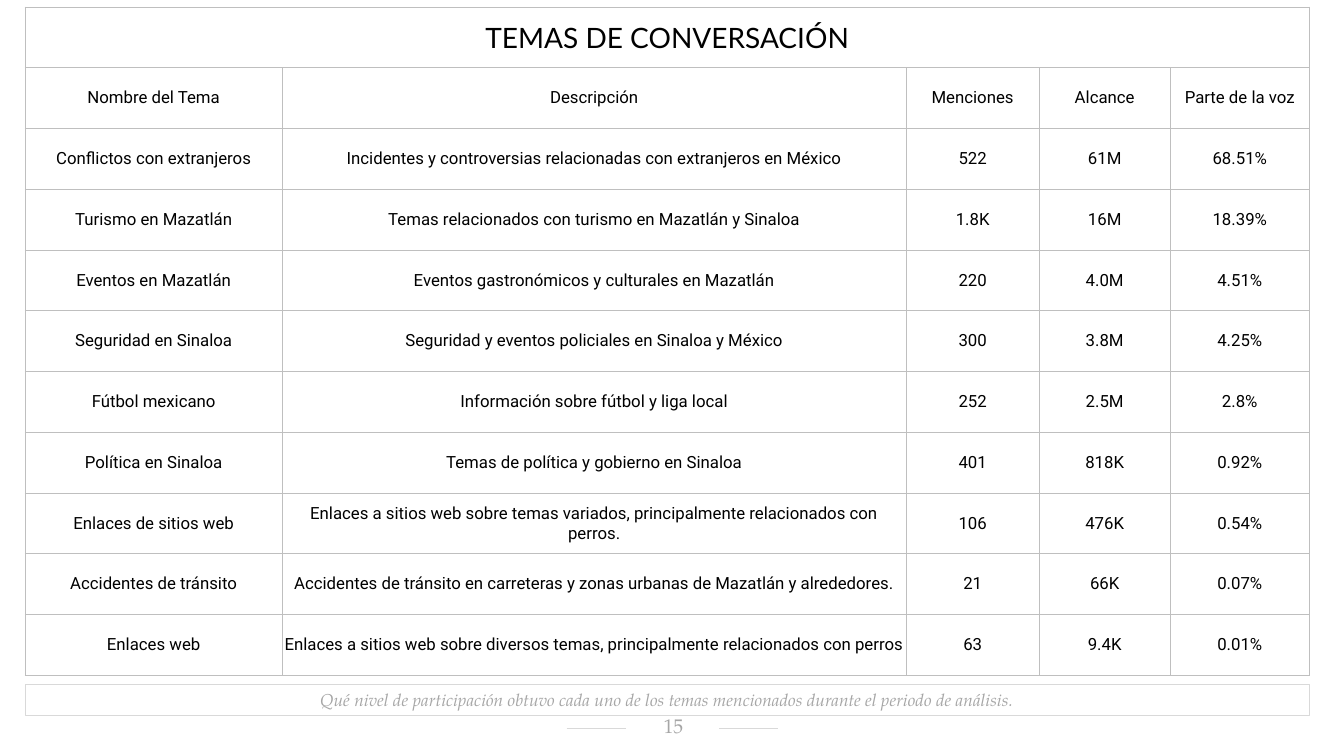
import pptx
import pptx.dml.color
import pptx.enum.shapes
import pptx.enum.text
import pptx.util
from lxml import etree
from pptx.oxml.ns import qn

Pt = pptx.util.Pt
COLORS = {
    "paper": "FFFFFF",
    "ink": "000000",
    "muted": "A6A6A6",
    "rule": "D9D9D9",
    "grid": "BFBFBF",
}
SERIF = "TeX Gyre Pagella"
TITLE = "TEMAS DE CONVERSACIÓN"
CAPTION = (
    "Qué nivel de participación obtuvo cada uno de los temas mencionados "
    "durante el periodo de análisis."
)
TOPICS = [
    ("Nombre del Tema", "Descripción", "Menciones", "Alcance", "Parte de la voz"),
    ("Conflictos con extranjeros",
     "Incidentes y controversias relacionadas con extranjeros en México",
     "522", "61M", "68.51%"),
    ("Turismo en Mazatlán",
     "Temas relacionados con turismo en Mazatlán y Sinaloa",
     "1.8K", "16M", "18.39%"),
    ("Eventos en Mazatlán",
     "Eventos gastronómicos y culturales en Mazatlán",
     "220", "4.0M", "4.51%"),
    ("Seguridad en Sinaloa",
     "Seguridad y eventos policiales en Sinaloa y México",
     "300", "3.8M", "4.25%"),
    ("Fútbol mexicano", "Información sobre fútbol y liga local",
     "252", "2.5M", "2.8%"),
    ("Política en Sinaloa", "Temas de política y gobierno en Sinaloa",
     "401", "818K", "0.92%"),
    ("Enlaces de sitios web",
     "Enlaces a sitios web sobre temas variados, principalmente relacionados con perros.",
     "106", "476K", "0.54%"),
    ("Accidentes de tránsito",
     "Accidentes de tránsito en carreteras y zonas urbanas de Mazatlán y alrededores.",
     "21", "66K", "0.07%"),
    ("Enlaces web",
     "Enlaces a sitios web sobre diversos temas, principalmente relacionados con perros",
     "63", "9.4K", "0.01%"),
]
LEFT = 18
COLUMN_WIDTHS = [183.6, 445.7, 95, 93.6, 99.4]
TABLE_WIDTH = sum(COLUMN_WIDTHS)
TABLE_TOP = 5
ROW_HEIGHT = 43.4


def rgb(color):
    return pptx.dml.color.RGBColor.from_string(COLORS[color])


def write(frame, text, font_name, size, color, italic=False):
    frame.text = text
    line = frame.paragraphs[0]
    line.alignment = pptx.enum.text.PP_ALIGN.CENTER
    font = line.runs[0].font
    font.name = font_name
    font.size = Pt(size)
    font.italic = italic
    font.color.rgb = rgb(color)


def add_borders(cell):
    properties = cell._tc.get_or_add_tcPr()
    for position, side in enumerate(("lnL", "lnR", "lnT", "lnB")):
        border = etree.Element(qn(f"a:{side}"), w=str(Pt(0.5)))
        fill = etree.SubElement(border, qn("a:solidFill"))
        etree.SubElement(fill, qn("a:srgbClr"), val=COLORS["grid"])
        properties.insert(position, border)


def style_cell(cell):
    cell.fill.solid()
    cell.fill.fore_color.rgb = rgb("paper")
    cell.vertical_anchor = pptx.enum.text.MSO_ANCHOR.MIDDLE
    cell.margin_left = cell.margin_right = Pt(0.75)
    cell.margin_top = cell.margin_bottom = Pt(0.75)
    add_borders(cell)


def add_topics_table(slide):
    row_count = len(TOPICS) + 1
    topics = slide.shapes.add_table(
        row_count, len(COLUMN_WIDTHS), Pt(LEFT), Pt(TABLE_TOP),
        Pt(TABLE_WIDTH), Pt(ROW_HEIGHT * row_count)).table
    topics.first_row = False
    topics.horz_banding = False
    for column, width in zip(topics.columns, COLUMN_WIDTHS):
        column.width = Pt(width)
    for row in topics.rows:
        row.height = Pt(ROW_HEIGHT)
    for cell in topics.iter_cells():
        style_cell(cell)
    heading = topics.cell(0, 0)
    heading.merge(topics.cell(0, len(COLUMN_WIDTHS) - 1))
    write(heading.text_frame, TITLE, "Lato", 20, "ink")
    for row_index, topic in enumerate(TOPICS, start=1):
        for column_index, text in enumerate(topic):
            cell = topics.cell(row_index, column_index)
            write(cell.text_frame, text, "Roboto", 12, "ink")


def add_caption(slide):
    caption = slide.shapes.add_shape(
        pptx.enum.shapes.MSO_SHAPE.RECTANGLE,
        Pt(LEFT), Pt(488.9), Pt(TABLE_WIDTH), Pt(22.3))
    caption.shadow.inherit = False
    caption.fill.background()
    caption.line.color.rgb = rgb("rule")
    caption.line.width = Pt(0.75)
    caption.text_frame.word_wrap = True
    caption.text_frame.vertical_anchor = pptx.enum.text.MSO_ANCHOR.TOP
    write(caption.text_frame, CAPTION, SERIF, 12.3, "muted", italic=True)


def add_footer_rule(slide, start, end):
    y = Pt(520)
    rule = slide.shapes.add_connector(
        pptx.enum.shapes.MSO_CONNECTOR.STRAIGHT, Pt(start), y, Pt(end), y)
    rule.line.color.rgb = rgb("rule")
    rule.line.width = Pt(0.5)
    etree.SubElement(rule._element.spPr, qn("a:effectLst"))


def add_page_number(slide, number):
    page = slide.shapes.add_textbox(Pt(446.4), Pt(511.2), Pt(67.7), Pt(16.6))
    frame = page.text_frame
    frame.word_wrap = True
    frame.vertical_anchor = pptx.enum.text.MSO_ANCHOR.MIDDLE
    frame.margin_left, frame.margin_right = Pt(8.6), Pt(7.2)
    frame.margin_top, frame.margin_bottom = Pt(1.4), Pt(3.6)
    write(frame, number, SERIF, 14.1, "muted")


def main():
    deck = pptx.Presentation()
    deck.slide_width, deck.slide_height = Pt(960), Pt(540)
    slide = deck.slides.add_slide(deck.slide_layouts[6])
    add_footer_rule(slide, 404.8, 447)
    add_footer_rule(slide, 513.6, 555.8)
    add_page_number(slide, "15")
    add_caption(slide)
    add_topics_table(slide)
    deck.save("out.pptx")


if __name__ == "__main__":
    main()
